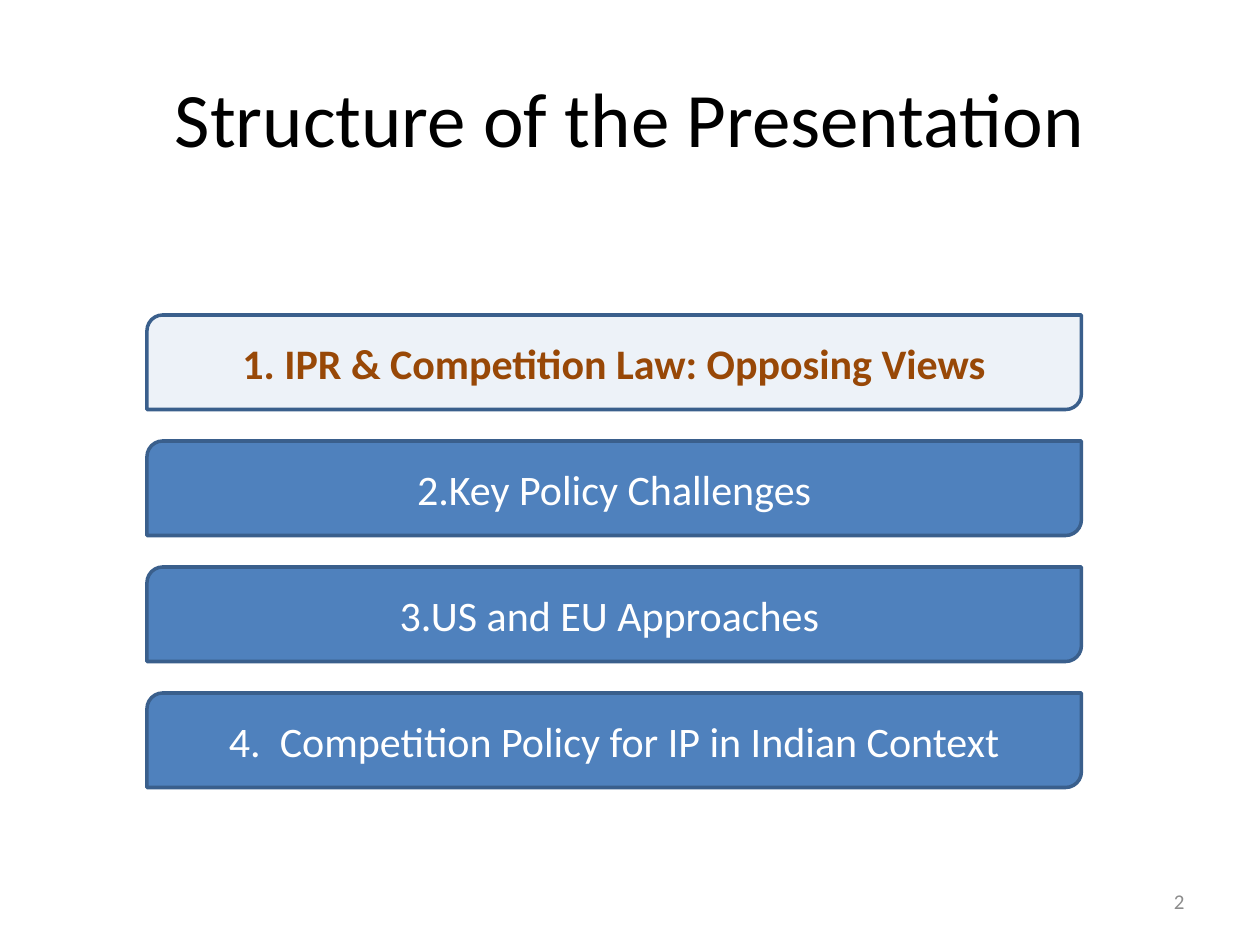
from lxml.etree import SubElement
from pptx import Presentation
from pptx.dml.color import RGBColor
from pptx.enum.shapes import MSO_SHAPE as Shape
from pptx.enum.text import MSO_ANCHOR as Anchor, PP_ALIGN as Align
from pptx.oxml.ns import qn
from pptx.util import Pt

COLORS = {
    "title": "000000",
    "bar": "4F81BD",
    "outline": "3A5F8C",
    "current": "984807",
    "bar_text": "FFFFFF",
    "page": "8C8C8C",
}


def write(shape, text, size, color, bold=False, align=Align.CENTER):
    frame = shape.text_frame
    frame.word_wrap = True
    frame.vertical_anchor = Anchor.MIDDLE
    paragraph = frame.paragraphs[0]
    paragraph.alignment = align
    run = paragraph.add_run()
    run.text = text
    run.font.name = "Calibri"
    run.font.size = Pt(size)
    run.font.bold = bold
    run.font.color.rgb = RGBColor.from_string(COLORS[color])


deck = Presentation()
deck.slide_width, deck.slide_height = Pt(720), Pt(540)
slide = deck.slides.add_slide(deck.slide_layouts[5])

# Title
title = slide.shapes.title
title.left, title.top, title.width, title.height = Pt(36), Pt(21.6), Pt(648), Pt(90)
write(title, "Structure of the Presentation", size=44, color="title")

# Agenda bars, the current section highlighted
sections = [
    "1. IPR & Competition Law: Opposing Views",
    "2.Key Policy Challenges",
    "3.US and EU Approaches ",
    "4.  Competition Policy for IP in Indian Context",
]
current_section = 0
for index, section in enumerate(sections):
    bar = slide.shapes.add_shape(
        Shape.ROUND_2_DIAG_RECTANGLE, Pt(84), Pt(180 + 72 * index), Pt(534), Pt(54))
    bar.shadow.inherit = False
    bar.fill.solid()
    bar.fill.fore_color.rgb = RGBColor.from_string(COLORS["bar"])
    bar.line.color.rgb = RGBColor.from_string(COLORS["outline"])
    bar.line.width = Pt(2)
    is_current = index == current_section
    write(bar, section, size=24, bold=is_current,
          color="current" if is_current else "bar_text")
    if is_current:
        # 10 % opacity
        fill_color = bar.fill._xPr.find(qn("a:solidFill")).find(qn("a:srgbClr"))
        SubElement(fill_color, qn("a:alpha"), val="10000")

# Page number
page_number = slide.shapes.add_textbox(Pt(516), Pt(500.5), Pt(168), Pt(28.75))
write(page_number, "2", size=12, color="page", align=Align.RIGHT)

deck.save("out.pptx")
